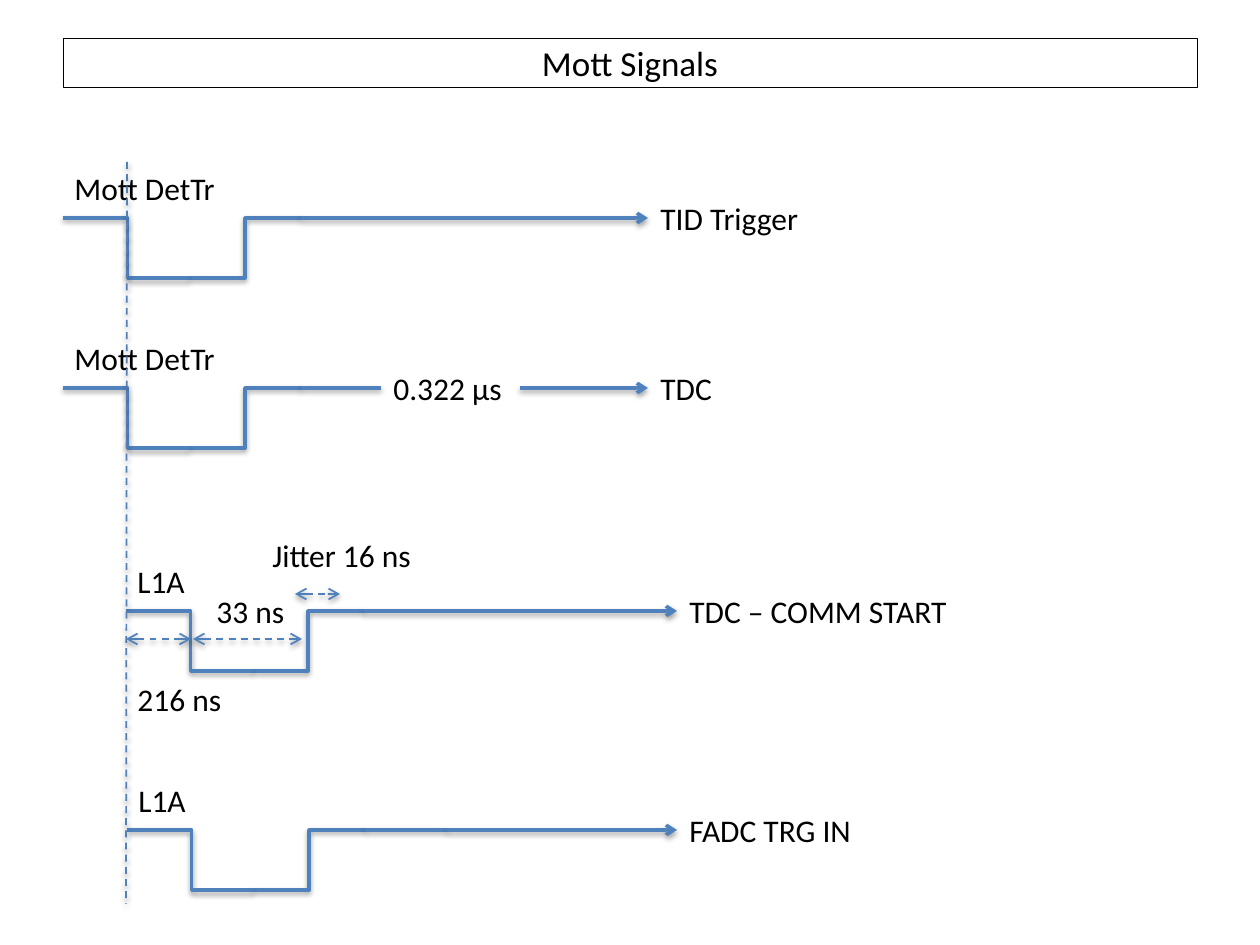
from dataclasses import dataclass

from pptx import Presentation
from pptx.dml.color import RGBColor
from pptx.enum.dml import MSO_LINE
from pptx.enum.shapes import MSO_CONNECTOR
from pptx.enum.text import MSO_ANCHOR, MSO_AUTO_SIZE, PP_ALIGN
from pptx.oxml.xmlchemy import OxmlElement
from pptx.slide import Slide
from pptx.util import Emu, Pt

PX_PER_INCH = 126


def px(length: int) -> Emu:
    return Emu(round(length * 914400 / PX_PER_INCH))


@dataclass(frozen=True)
class Theme:
    font: str = "Calibri"
    ink: RGBColor = RGBColor(0x00, 0x00, 0x00)
    signal: RGBColor = RGBColor(0x4F, 0x81, 0xBD)
    title_size: Pt = Pt(20)
    label_size: Pt = Pt(18)
    signal_width: Pt = Pt(2)
    guide_width: Pt = Pt(1)
    frame_width: Pt = Pt(0.25)


@dataclass(frozen=True)
class Label:
    text: str
    left: int
    top: int
    width: int


@dataclass(frozen=True)
class Guide:
    x1: int
    y1: int
    x2: int
    y2: int
    arrows: bool = True


@dataclass(frozen=True)
class Trace:
    """A signal that dips once and then runs through stops to its output."""
    name: str
    output: str
    output_width: int
    start: int
    level: int
    runs: tuple[tuple[int, int], ...]


THEME = Theme()

LABEL_HEIGHT = 50
NAME_WIDTH = 175
NAME_RISE = 55
OUTPUT_RISE = 25
PULSE_DEPTH = 60
PULSE_MIDDLE = 126
PULSE_END = 238
DROP_ADJUST = 51400

TRACES = (
    Trace("Mott DetTr", "TID Trigger", 173, 63, 218, ((301, 648),)),
    Trace("Mott DetTr", "TDC", 127, 63, 388, ((301, 381), (520, 648))),
    Trace("L1A", "TDC – COMM START", 314, 126, 611, ((364, 677),)),
    Trace("L1A", "FADC TRG IN", 190, 127, 830, ((365, 447), (447, 677))),
)

GUIDES = (
    Guide(127, 162, 126, 904, arrows=False),
    Guide(126, 639, 191, 639),
    Guide(193, 639, 302, 639),
    Guide(295, 594, 340, 594),
)

TIMINGS = (
    Label("0.322 µs", 381, 363, 140),
    Label("216 ns", 125, 674, 122),
    Label("33 ns", 204, 586, 122),
    Label("Jitter 16 ns", 260, 530, 174),
)


def add_line(slide: Slide, x1: int, y1: int, x2: int, y2: int, width: Pt,
             kind: MSO_CONNECTOR = MSO_CONNECTOR.STRAIGHT,
             dashed: bool = False, head: bool = False, tail: bool = False,
             adjust: int | None = None) -> None:
    """Draw a connector, which keeps the soft shadow of the default theme."""
    connector = slide.shapes.add_connector(kind, px(x1), px(y1), px(x2), px(y2))
    connector.line.color.rgb = THEME.signal
    connector.line.width = width
    if dashed:
        connector.line.dash_style = MSO_LINE.DASH
    properties = connector.element.spPr
    outline = properties.get_or_add_ln()
    for tag, wanted in (("a:headEnd", head), ("a:tailEnd", tail)):
        if wanted:
            end = OxmlElement(tag)
            end.set("type", "arrow")
            outline.append(end)
    if adjust is not None:
        bend = OxmlElement("a:gd")
        bend.set("name", "adj1")
        bend.set("fmla", f"val {adjust}")
        properties.xpath("./a:prstGeom/a:avLst")[0].append(bend)


def add_label(slide: Slide, label: Label) -> None:
    box = slide.shapes.add_textbox(px(label.left), px(label.top),
                                   px(label.width), px(LABEL_HEIGHT))
    frame = box.text_frame
    frame.word_wrap = True
    frame.auto_size = MSO_AUTO_SIZE.SHAPE_TO_FIT_TEXT
    paragraph = frame.paragraphs[0]
    paragraph.text = label.text
    paragraph.font.name = THEME.font
    paragraph.font.size = THEME.label_size
    paragraph.font.color.rgb = THEME.ink


def add_trace(slide: Slide, trace: Trace) -> None:
    low = trace.level + PULSE_DEPTH
    middle = trace.start + PULSE_MIDDLE
    add_line(slide, middle, low, trace.start + PULSE_END, trace.level,
             THEME.signal_width, MSO_CONNECTOR.ELBOW)
    add_line(slide, trace.start, trace.level, middle, low,
             THEME.signal_width, MSO_CONNECTOR.ELBOW, adjust=DROP_ADJUST)
    output_x = trace.runs[-1][1]
    for begin, end in trace.runs:
        add_line(slide, begin, trace.level, end, trace.level,
                 THEME.signal_width, tail=end == output_x)
    add_label(slide, Label(trace.output, output_x, trace.level - OUTPUT_RISE,
                           trace.output_width))
    add_label(slide, Label(trace.name, trace.start - 1,
                           trace.level - NAME_RISE, NAME_WIDTH))


def add_title(slide: Slide, text: str) -> None:
    title = slide.shapes.title
    title.left, title.top = px(63), px(38)
    title.width, title.height = px(1134), px(49)
    title.line.color.rgb = THEME.ink
    title.line.width = THEME.frame_width
    title.text_frame.vertical_anchor = MSO_ANCHOR.MIDDLE
    paragraph = title.text_frame.paragraphs[0]
    paragraph.text = text
    paragraph.alignment = PP_ALIGN.CENTER
    paragraph.font.name = THEME.font
    paragraph.font.size = THEME.title_size
    paragraph.font.color.rgb = THEME.ink


def main() -> None:
    presentation = Presentation()
    presentation.slide_width = px(1260)
    presentation.slide_height = px(945)
    slide = presentation.slides.add_slide(presentation.slide_layouts[5])
    add_title(slide, "Mott Signals")
    for trace in TRACES:
        add_trace(slide, trace)
    for guide in GUIDES:
        add_line(slide, guide.x1, guide.y1, guide.x2, guide.y2,
                 THEME.guide_width, dashed=True,
                 head=guide.arrows, tail=guide.arrows)
    for timing in TIMINGS:
        add_label(slide, timing)
    presentation.save("out.pptx")


if __name__ == "__main__":
    main()
